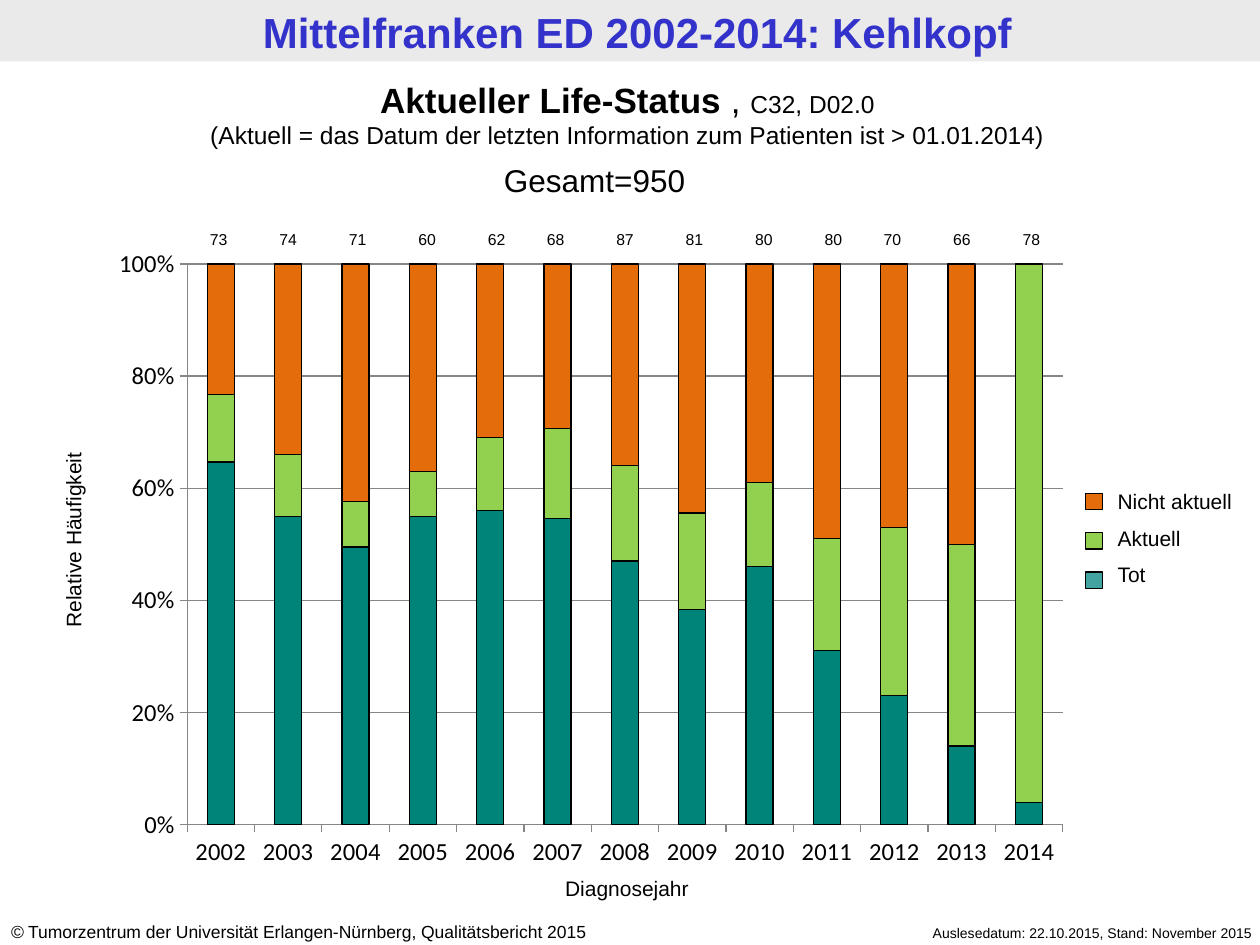
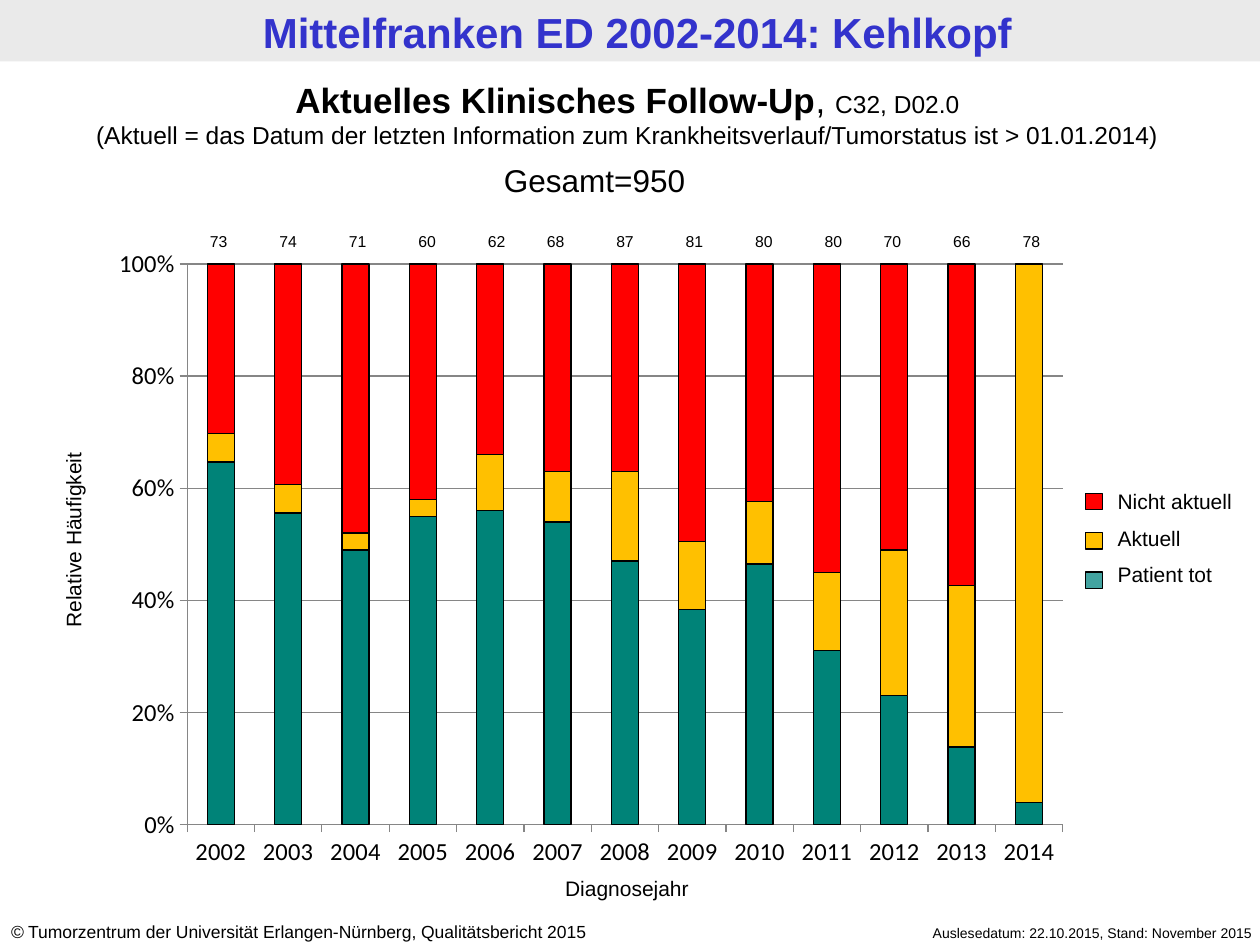
from lxml import etree
from pptx import Presentation
from pptx.chart.data import CategoryChartData
from pptx.dml.color import RGBColor
from pptx.enum.chart import XL_CHART_TYPE, XL_TICK_MARK
from pptx.enum.shapes import MSO_SHAPE
from pptx.enum.text import PP_ALIGN
from pptx.oxml import parse_xml
from pptx.oxml.ns import nsdecls, qn
from pptx.util import Cm, Pt

STACKED = XL_CHART_TYPE.COLUMN_STACKED_100
TICK_OUTSIDE = XL_TICK_MARK.OUTSIDE
RECTANGLE = MSO_SHAPE.RECTANGLE
LEFT, CENTER, RIGHT = PP_ALIGN.LEFT, PP_ALIGN.CENTER, PP_ALIGN.RIGHT

COLORS = {
    "band": "EAEAEA", "title": "3333CC", "text": "000000", "grid": "868686",
    "dead": "008378", "dead_key": "008380",
    "green": "92D050", "orange": "E46C0A", "yellow": "FFC000", "red": "FF0000",
}
TEXT_FONT, CHART_FONT = "Arial", "Calibri"

YEARS = [str(year) for year in range(2002, 2015)]
CASES = [73, 74, 71, 60, 62, 68, 87, 81, 80, 80, 70, 66, 78]
DEAD = [64, 55, 49, 55, 56, 54, 47, 38, 46, 31, 23, 14, 4]

LIFE_STATUS = {
    "heading": "Aktueller Life-Status ",
    "separator": ", ",
    "explanation": "(Aktuell = das Datum der letzten Information zum Patienten "
                   "ist > 01.01.2014)",
    "dead_label": "Tot",
    "current": [12, 11, 8, 8, 13, 16, 17, 17, 15, 20, 30, 36, 96],
    "outdated": [23, 34, 42, 37, 31, 29, 36, 44, 39, 49, 47, 50, 0],
    "current_color": "green", "outdated_color": "orange",
    "cases_top": 4.5, "legend_width": 3.12,
}
FOLLOW_UP = {
    "heading": "Aktuelles Klinisches Follow-Up",
    "separator": ", ",
    "explanation": "(Aktuell = das Datum der letzten Information zum "
                   "Krankheitsverlauf/Tumorstatus ist > 01.01.2014)",
    "dead_label": "Patient tot",
    "current": [5, 5, 3, 3, 10, 9, 16, 12, 11, 14, 26, 29, 96],
    "outdated": [30, 39, 48, 42, 34, 37, 37, 49, 42, 55, 51, 58, 0],
    "current_color": "yellow", "outdated_color": "red",
    "cases_top": 4.55, "legend_width": 3.61,
}


def rgb(name):
    return RGBColor.from_string(COLORS[name])


def run(text, size, bold=False, italic=False, color="text"):
    return {"text": text, "size": size, "bold": bold, "italic": italic, "color": color}


def add_text(slide, box, paragraphs, align=LEFT, space_before=0, rotation=0):
    """Place a text box; each paragraph is a list of runs."""
    shape = slide.shapes.add_textbox(*map(Cm, box))
    shape.rotation = rotation
    frame = shape.text_frame
    frame.word_wrap = True
    for index, runs in enumerate(paragraphs):
        paragraph = frame.add_paragraph() if index else frame.paragraphs[0]
        paragraph.alignment = align
        if index and space_before:
            paragraph.space_before = Pt(space_before)
        for item in runs:
            text_run = paragraph.add_run()
            text_run.text = item["text"]
            font = text_run.font
            font.name, font.size = TEXT_FONT, Pt(item["size"])
            font.bold, font.italic = item["bold"], item["italic"]
            font.color.rgb = rgb(item["color"])
    return shape


def add_rectangle(slide, box, color, outlined=False, opacity=None):
    shape = slide.shapes.add_shape(RECTANGLE, *map(Cm, box))
    shape.shadow.inherit = False
    shape.fill.solid()
    shape.fill.fore_color.rgb = rgb(color)
    if opacity:
        fill_color = shape.fill._xPr.find(".//" + qn("a:srgbClr"))
        etree.SubElement(fill_color, qn("a:alpha"), val=str(opacity * 1000))
    if outlined:
        shape.line.color.rgb = rgb("text")
        shape.line.width = Pt(0.75)
    else:
        shape.line.fill.background()


def add_frame(slide):
    """Title band and footers shared by all slides."""
    add_rectangle(slide, (0, 0, 25.4, 1.24), "band")
    title = add_text(slide, (0.15, 0.03, 25.4, 1.24),
                     [[run("Mittelfranken ED 2002-2014: Kehlkopf", 24, bold=True,
                           color="title")]], CENTER)
    title.text_frame.margin_top = title.text_frame.margin_bottom = Cm(0.11)
    add_text(slide, (16.89, 18.52, 8.61, 0.61),
             [[run("Auslesedatum: 22.10.2015, Stand: November 2015", 8)]], RIGHT)
    add_text(slide, (-0.03, 18.44, 13.31, 0.69),
             [[run("©", 10, italic=True),
               run(" Tumorzentrum der Universität Erlangen-Nürnberg, "
                   "Qualitätsbericht 2015", 10)]])


def set_plot_layout(chart, x, y, w, h):
    plot_area = chart._chartSpace.chart.plotArea
    for old_layout in plot_area.findall(qn("c:layout")):
        plot_area.remove(old_layout)
    plot_area.insert(0, parse_xml(
        f'<c:layout {nsdecls("c")}><c:manualLayout><c:layoutTarget val="inner"/>'
        f'<c:xMode val="edge"/><c:yMode val="edge"/><c:x val="{x}"/><c:y val="{y}"/>'
        f'<c:w val="{w}"/><c:h val="{h}"/></c:manualLayout></c:layout>'))


def style_axis(axis):
    axis.major_tick_mark = TICK_OUTSIDE
    axis.tick_labels.font.size = Pt(14)
    axis.format.line.color.rgb = rgb("grid")
    axis.format.line.width = Pt(0.75)


def add_status_chart(slide, columns):
    """Stacked chart; columns holds (values, colour) from bottom to top."""
    data = CategoryChartData()
    data.categories = YEARS
    for number, (values, _) in enumerate(columns, 1):
        data.add_series(f"Series {number}", values)
    chart = slide.shapes.add_chart(
        STACKED, Cm(2.01), Cm(4.75), Cm(19.81), Cm(12.98), data).chart
    chart.has_legend = chart.has_title = False
    chart.font.name, chart.font.size = CHART_FONT, Pt(18)
    chart.font.color.rgb = rgb("text")
    set_plot_layout(chart, 0.089, 0.044, 0.891, 0.871)

    plot = chart.plots[0]
    plot.vary_by_categories = False
    plot.gap_width, plot.overlap = 150, 100
    for series, (_, color) in zip(plot.series, columns):
        series.format.fill.solid()
        series.format.fill.fore_color.rgb = rgb(color)
        series.format.line.color.rgb = rgb("text")
        series.format.line.width = Pt(0.75)

    style_axis(chart.category_axis)
    value_axis = chart.value_axis
    style_axis(value_axis)
    value_axis.major_unit = 0.2
    value_axis.tick_labels.number_format = "0%"
    value_axis.tick_labels.number_format_is_linked = False
    value_axis.has_major_gridlines = True
    value_axis.major_gridlines.format.line.color.rgb = rgb("grid")
    value_axis.major_gridlines.format.line.width = Pt(0.75)


def add_case_numbers(slide, top):
    """Case numbers stand in groups of five above the columns."""
    for index, cases in enumerate(CASES):
        group, place = divmod(index, 5)
        add_text(slide, (3.71 + 6.79 * group + 1.4 * place, top, 1.4, 0.64),
                 [[run(str(cases), 9)]], CENTER)


def add_legend(slide, entries, width):
    """Legend of (label, colour, opacity) from top to bottom."""
    add_text(slide, (22.28, 9.73, width, 2.31),
             [[run(label, 12)] for label, _, _ in entries], space_before=6.5)
    for index, (_, color, opacity) in enumerate(entries):
        add_rectangle(slide, (21.89, 9.95 + 0.79 * index, 0.33, 0.33), color,
                      outlined=True, opacity=opacity)


def add_status_slide(presentation, status):
    slide = presentation.slides.add_slide(presentation.slide_layouts[6])
    add_frame(slide)

    # Chart with axis titles and case numbers
    add_status_chart(slide, [(DEAD, "dead"),
                             (status["current"], status["current_color"]),
                             (status["outdated"], status["outdated_color"])])
    add_text(slide, (-1.57, 10.49, 6.12, 0.79), [[run("Relative Häufigkeit", 12)]],
             CENTER, rotation=270)
    add_text(slide, (9.78, 17.53, 5.72, 0.79), [[run("Diagnosejahr", 12)]], CENTER)
    add_case_numbers(slide, status["cases_top"])

    # Heading and total
    add_text(slide, (-0.1, 1.45, 25.5, 1.7),
             [[run(status["heading"], 20, bold=True), run(status["separator"], 20),
               run("C32, D02.0", 14)],
              [run(status["explanation"], 14)]], CENTER)
    add_text(slide, (9.91, 3.12, 5.59, 1.02), [[run("Gesamt=950", 18)]])

    add_legend(slide, [("Nicht aktuell", status["outdated_color"], None),
                       ("Aktuell", status["current_color"], None),
                       (status["dead_label"], "dead_key", 74)],
               status["legend_width"])


def main():
    presentation = Presentation()
    presentation.slide_width, presentation.slide_height = Cm(25.4), Cm(19.05)
    for status in (LIFE_STATUS, FOLLOW_UP):
        add_status_slide(presentation, status)
    presentation.save("out.pptx")


if __name__ == "__main__":
    main()
